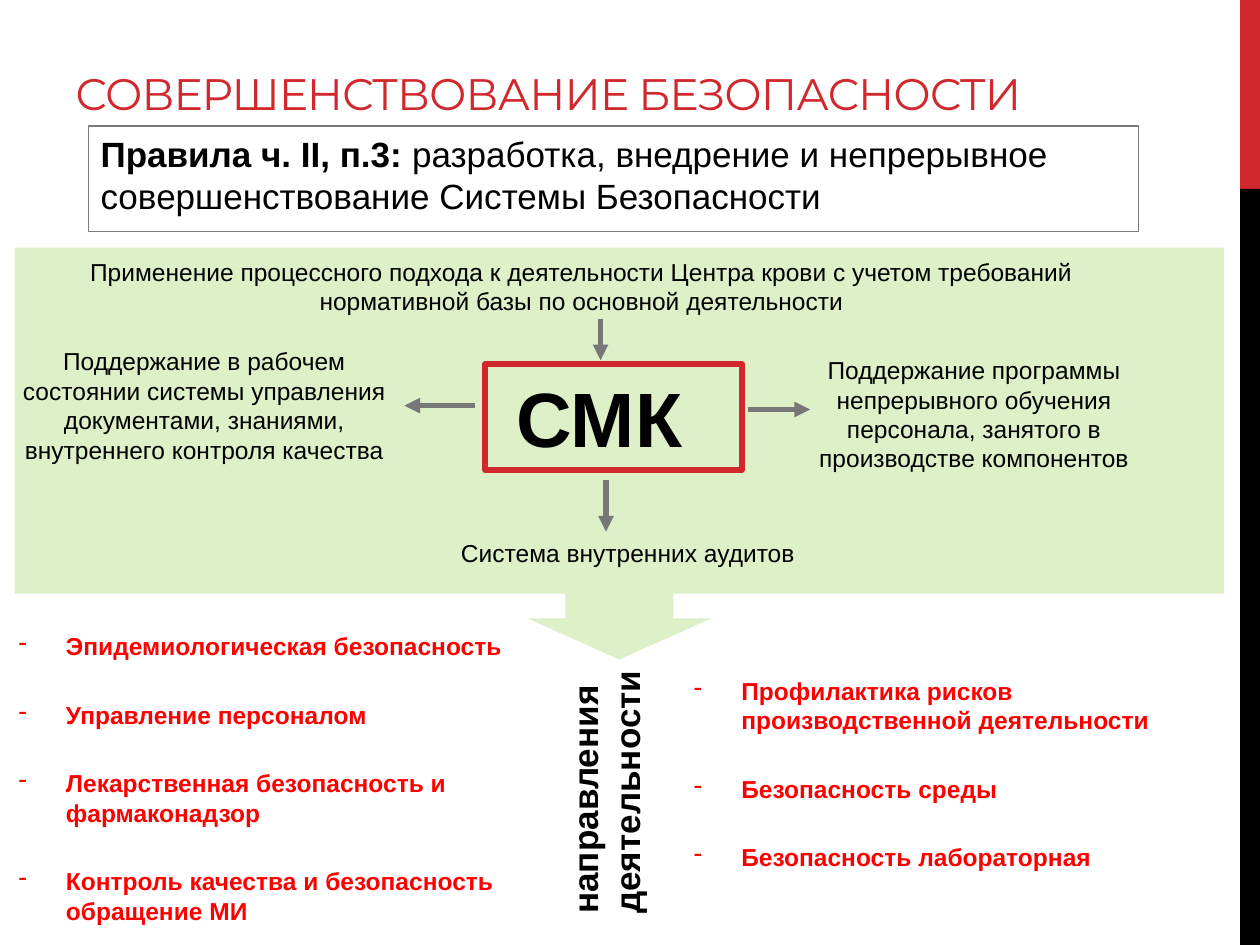
"""Build the slide on improving safety around the quality management system."""
from lxml import etree
from pptx import Presentation
from pptx.dml.color import RGBColor
from pptx.enum.shapes import MSO_CONNECTOR, MSO_SHAPE
from pptx.enum.text import MSO_ANCHOR, PP_ALIGN
from pptx.oxml.ns import qn
from pptx.util import Pt

RECT, CALLOUT = MSO_SHAPE.RECTANGLE, MSO_SHAPE.RIGHT_ARROW_CALLOUT
STRAIGHT = MSO_CONNECTOR.STRAIGHT
LEFT, CENTER = PP_ALIGN.LEFT, PP_ALIGN.CENTER
TOP, BOTTOM = MSO_ANCHOR.TOP, MSO_ANCHOR.BOTTOM

RED, BLACK, ALERT, GREEN = "D1282E", "000000", "FF0000", "92D050"
OUTLINE, ARROW = "7A7A7A", "777777"
SLIDE_W, SLIDE_H, BAR_W, BAR_SPLIT = 720, 540, 11.3, 108

TITLE = "СОВЕРШЕНСТВОВАНИЕ БЕЗОПАСНОСТИ"
RULE = ("Правила ч. II, п.3: ",
        "разработка, внедрение и непрерывное совершенствование Системы Безопасности")
SYSTEM = "СМК"
PROCESSES = [
    ("Применение процессного подхода к деятельности Центра крови с учетом требований "
     "нормативной базы по основной деятельности", (28.8, 143.3, 607, 41)),
    ("Поддержание в рабочем состоянии системы управления документами, знаниями, "
     "внутреннего контроля качества", (2.2, 194.4, 229, 75)),
    ("Поддержание программы непрерывного обучения персонала, занятого в "
     "производстве компонентов", (442.1, 199.4, 229, 75)),
    ("Система внутренних аудитов", (249.8, 303.8, 218, 24.5)),
]
ARROWS = [
    (343.2, 182.2, 343.2, 205.9),
    (271.4, 231.8, 231.1, 231.8),
    (427.7, 234, 463, 234),
    (346.3, 274.3, 346.3, 303.8),
]
DIRECTIONS = [
    (["Эпидемиологическая безопасность",
      "Управление персоналом",
      "Лекарственная безопасность и фармаконадзор",
      "Контроль качества и безопасность обращение МИ"], (3.6, 357.1, 305.3, 175)),
    (["Профилактика рисков производственной деятельности",
      "Безопасность среды",
      "Безопасность лабораторная"], (389.5, 382.5, 316.8, 151.7)),
]
DIRECTIONS_LABEL = ["направления", "деятельности"]
BULLET_INDENT, ITEM_GAP = 27, 22.4


def rgb(value):
    return RGBColor.from_string(value)


def add_block(slide, box, fill=None, line=None, width=0.75, kind=RECT):
    block = slide.shapes.add_shape(kind, *map(Pt, box))
    block.shadow.inherit = False
    if fill:
        block.fill.solid()
        block.fill.fore_color.rgb = rgb(fill)
    else:
        block.fill.background()
    if line:
        block.line.color.rgb = rgb(line)
        block.line.width = Pt(width)
    else:
        block.line.fill.background()
    return block


def write(shape, lines, size, color=BLACK, bold=False, align=LEFT, anchor=TOP,
          font="Arial", wrap=True, bullet=None):
    frame = shape.text_frame
    frame.word_wrap = wrap
    frame.vertical_anchor = anchor
    for index, line in enumerate(lines):
        paragraph = frame.paragraphs[0] if index == 0 else frame.add_paragraph()
        paragraph.add_run().text = line
        paragraph.alignment = align
        if bullet:
            if index:
                paragraph.space_before = Pt(ITEM_GAP)
            props = paragraph._p.get_or_add_pPr()
            props.set("marL", str(Pt(BULLET_INDENT)))
            props.set("indent", str(-Pt(BULLET_INDENT)))
            etree.SubElement(props, qn("a:buChar")).set("char", bullet)
        paragraph.font.name = font
        paragraph.font.size = Pt(size)
        paragraph.font.bold = bold
        paragraph.font.color.rgb = rgb(color)
    return frame


def add_text(slide, box, lines, size, **style):
    text = slide.shapes.add_textbox(*map(Pt, box))
    write(text, lines, size, **style)
    return text


def add_arrow(slide, ends):
    arrow = slide.shapes.add_connector(STRAIGHT, *map(Pt, ends))
    arrow.line.color.rgb = rgb(ARROW)
    arrow.line.width = Pt(3)
    etree.SubElement(arrow.line._get_or_add_ln(), qn("a:tailEnd")).set("type", "triangle")
    etree.SubElement(arrow._element.spPr, qn("a:effectLst"))


def add_callout(slide):
    callout = add_block(slide, (236.2, -86.4, 235.4, 691.2), GREEN, kind=CALLOUT)
    callout.rotation = 90
    for index, value in enumerate((0.262, 0.224, 0.1, 0.84)):
        callout.adjustments[index] = value
    color = callout._element.spPr.find(qn("a:solidFill"))[0]
    etree.SubElement(color, qn("a:alpha")).set("val", "31000")


def main():
    deck = Presentation()
    deck.slide_width, deck.slide_height = Pt(SLIDE_W), Pt(SLIDE_H)
    slide = deck.slides.add_slide(deck.slide_layouts[6])

    bar_left = SLIDE_W - BAR_W
    add_block(slide, (bar_left, 0, BAR_W, BAR_SPLIT), RED)
    add_block(slide, (bar_left, BAR_SPLIT, BAR_W, SLIDE_H - BAR_SPLIT), BLACK)
    add_callout(slide)

    title = add_text(slide, (36, 12.2, 645, 59.8), [TITLE], 25.2, color=RED,
                     anchor=BOTTOM, font="Montserrat")
    title.text_frame.paragraphs[0].runs[0].font._element.set("spc", "-60")

    rule = add_block(slide, (50.4, 72, 600, 60.5), line=OUTLINE)
    heading, statement = RULE
    paragraph = write(rule, [heading], 20).paragraphs[0]
    paragraph.runs[0].font.bold = True
    paragraph.add_run().text = statement

    add_block(slide, (277.2, 208.1, 146.9, 60.5), line=RED, width=3)
    add_text(slide, (288, 208.1, 110.2, 60.5), [SYSTEM], 44, bold=True, wrap=False)

    for process, box in PROCESSES:
        add_text(slide, box, [process], 14, align=CENTER)
    for ends in ARROWS:
        add_arrow(slide, ends)
    for items, box in DIRECTIONS:
        add_text(slide, box, items, 14, color=ALERT, bold=True, bullet="-")

    label = add_text(slide, (267.8, 423.4, 156.2, 55.4), DIRECTIONS_LABEL, 20, bold=True)
    label.rotation = 270
    deck.save("out.pptx")


if __name__ == "__main__":
    main()
